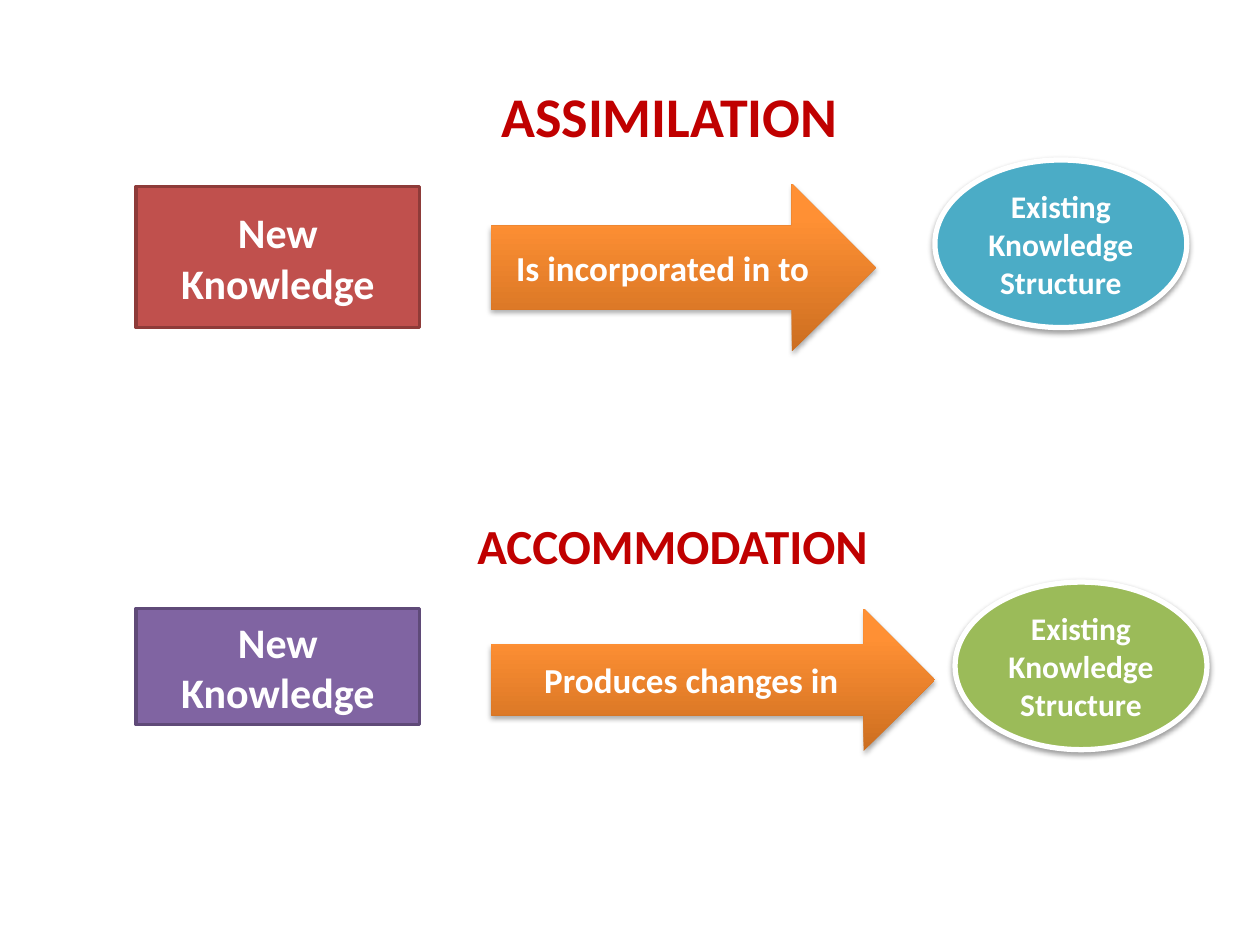
import lxml.etree
import pptx
import pptx.dml.color
import pptx.enum.shapes
import pptx.enum.text
import pptx.oxml.ns
import pptx.util

SLIDE_WIDTH, SLIDE_HEIGHT = pptx.util.Inches(10), pptx.util.Inches(7.5)
COLUMN, ROW = SLIDE_WIDTH / 100, SLIDE_HEIGHT / 75
FORMS = pptx.enum.shapes.MSO_SHAPE
ARROW_STOPS = ((0, "CC6E20"), (80, "FF9034"), (100, "FF9136"))


def color(value):
    return pptx.dml.color.RGBColor.from_string(value)


def add_node(parent, tag, **attributes):
    node = lxml.etree.SubElement(parent, pptx.oxml.ns.qn(tag))
    for name, value in attributes.items():
        node.set(name, str(value))
    return node


def place(origin, part):
    left, top, width, height = part
    return (int((origin[0] + left) * COLUMN), int((origin[1] + top) * ROW),
            int(width * COLUMN), int(height * ROW))


def write(frame, wording, size, ink, align):
    paragraph = frame.paragraphs[0]
    paragraph.alignment = align
    run = paragraph.add_run()
    run.text = wording
    style = {"name": "Calibri", "size": pptx.util.Pt(size), "bold": True}
    for name, value in style.items():
        setattr(run.font, name, value)
    run.font.color.rgb = color(ink)


def add_block(slide, form, box, wording, size):
    block = slide.shapes.add_shape(form, *box)
    block.shadow.inherit = False
    layout = {"word_wrap": True, "vertical_anchor": pptx.enum.text.MSO_ANCHOR.MIDDLE}
    for name, value in layout.items():
        setattr(block.text_frame, name, value)
    write(block.text_frame, wording, size, "FFFFFF", pptx.enum.text.PP_ALIGN.CENTER)
    return block


def paint(block, fill, line, width):
    block.fill.solid()
    block.fill.fore_color.rgb = color(fill)
    block.line.color.rgb = color(line)
    block.line.width = pptx.util.Pt(width)


def cast_shadow(block, opacity, distance):
    effects = block._element.spPr.find(pptx.oxml.ns.qn("a:effectLst"))
    shadow = add_node(effects, "a:outerShdw", blurRad=pptx.util.Pt(3.1),
                      dist=pptx.util.Pt(distance), dir=5400000, rotWithShape=0)
    shade = add_node(shadow, "a:srgbClr", val="000000")
    add_node(shade, "a:alpha", val=opacity * 1000)


def add_heading(slide, box, wording, size):
    heading = slide.shapes.add_textbox(*box)
    layout = {"word_wrap": False,
              "auto_size": pptx.enum.text.MSO_AUTO_SIZE.SHAPE_TO_FIT_TEXT}
    for name, value in layout.items():
        setattr(heading.text_frame, name, value)
    write(heading.text_frame, wording, size, "C00000", pptx.enum.text.PP_ALIGN.LEFT)


def add_new_knowledge(slide, box, fill, line):
    knowledge = add_block(slide, FORMS.RECTANGLE, box, "New Knowledge", 24)
    paint(knowledge, fill, line, 2)


def add_effect_arrow(slide, box, wording):
    arrow = add_block(slide, FORMS.RIGHT_ARROW, box, wording, 20)
    arrow.line.fill.background()
    arrow.fill.gradient()
    arrow.fill.gradient_angle = 90
    stops = arrow._element.spPr.find(".//" + pptx.oxml.ns.qn("a:gsLst"))
    for stop in list(stops):
        stops.remove(stop)
    for position, value in ARROW_STOPS:
        stop = add_node(stops, "a:gs", pos=position * 1000)
        add_node(stop, "a:srgbClr", val=value)
    cast_shadow(arrow, 35, 1.8)


def add_structure(slide, box, fill):
    structure = add_block(slide, FORMS.OVAL, box, "Existing Knowledge Structure", 18)
    paint(structure, fill, "FFFFFF", 3)
    cast_shadow(structure, 38, 1.6)


def add_process(slide, origin, process):
    heading, knowledge, arrow, structure = (
        process[name] for name in ("heading", "knowledge", "arrow", "structure"))
    add_new_knowledge(slide, place(origin, knowledge[0]), *knowledge[1:])
    add_effect_arrow(slide, place(origin, arrow[0]), *arrow[1:])
    add_structure(slide, place(origin, structure[0]), *structure[1:])
    add_heading(slide, place(origin, heading[0]), *heading[1:])


ASSIMILATION = {
    "heading": ((28, 0, 29, 6.4), "ASSIMILATION", 32),
    "knowledge": ((0, 8.8, 22.5, 11.2), "C0504D", "8E3B39"),
    "arrow": ((28.2, 8.6, 30.5, 13.3), "Is incorporated in to"),
    "structure": ((63.4, 6.7, 20, 13.3), "4BACC6"),
}
ACCOMMODATION = {
    "heading": ((26.1, 0, 33.4, 5.7), "ACCOMMODATION", 28),
    "knowledge": ((0, 7.9, 22.5, 9.2), "8064A2", "5F4A78"),
    "arrow": ((28.2, 7.9, 35.2, 11.3), "Produces changes in "),
    "structure": ((65, 5.8, 20, 13.3), "9BBB59"),
}


def main():
    deck = pptx.Presentation()
    for name, value in {"slide_width": SLIDE_WIDTH, "slide_height": SLIDE_HEIGHT}.items():
        setattr(deck, name, value)
    slide = deck.slides.add_slide(deck.slide_layouts[6])
    add_process(slide, (10.8, 6), ASSIMILATION)
    add_process(slide, (10.8, 40.4), ACCOMMODATION)
    deck.save("out.pptx")


if __name__ == "__main__":
    main()
